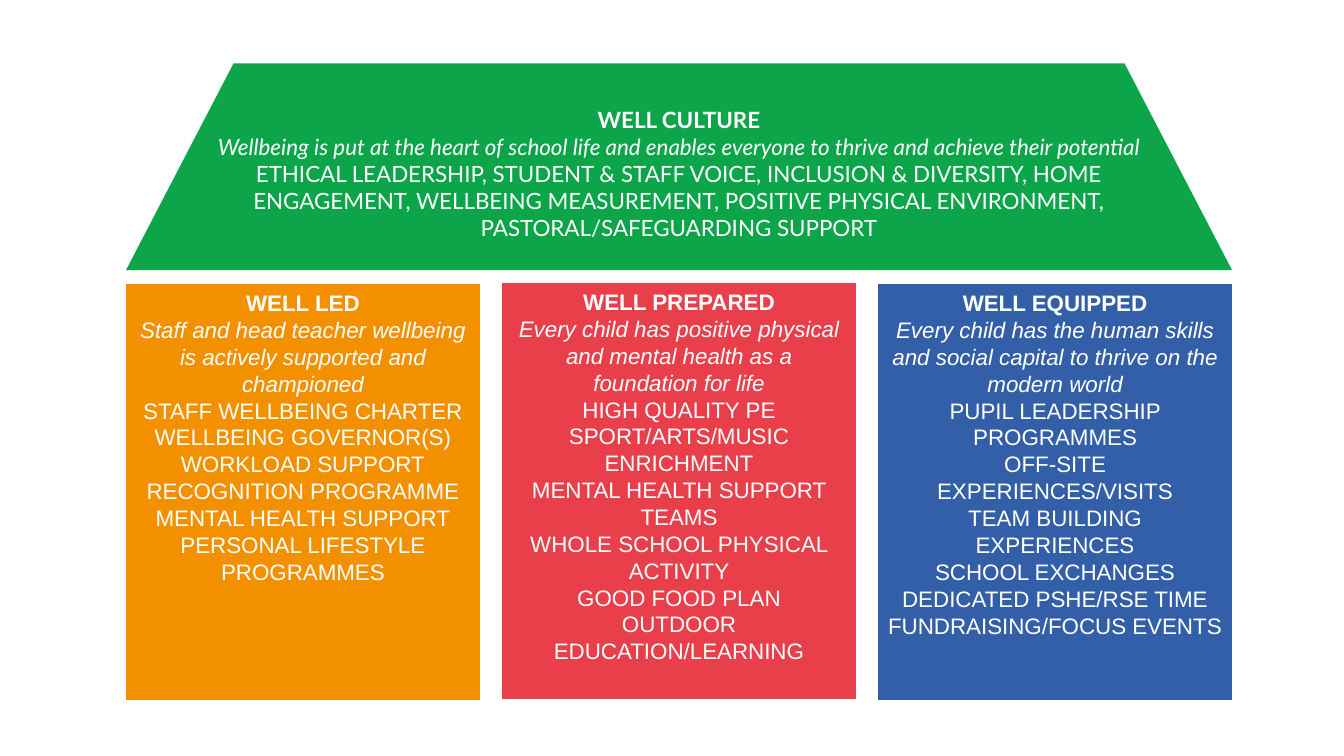
"""Build the wellbeing framework slide: a roof of culture over three pillars."""
from pptx import Presentation
from pptx.dml.color import RGBColor
from pptx.enum.shapes import MSO_SHAPE as Shape
from pptx.enum.text import MSO_ANCHOR as Anchor, PP_ALIGN as Align
from pptx.util import Inches, Pt

THEME = {
    "green": RGBColor.from_string("0DA549"),
    "orange": RGBColor.from_string("F39000"),
    "red": RGBColor.from_string("E83F4B"),
    "blue": RGBColor.from_string("335FA9"),
    "text": RGBColor.from_string("FFFFFF"),
    "size": Pt(16),
    "roof_font": "Lato",
    "pillar_font": "Arial",
}

ROOF = [
    "WELL CULTURE",
    "Wellbeing is put at the heart of school life and enables everyone to thrive and achieve their potential",
    "ETHICAL LEADERSHIP, STUDENT & STAFF VOICE, INCLUSION & DIVERSITY, HOME ENGAGEMENT, "
    "WELLBEING MEASUREMENT, POSITIVE PHYSICAL ENVIRONMENT, PASTORAL/SAFEGUARDING SUPPORT",
]

PILLARS = [
    ("orange", 2.82, [
        "WELL LED",
        "Staff and head teacher wellbeing is actively supported and championed",
        "STAFF WELLBEING CHARTER",
        "WELLBEING GOVERNOR(S)",
        "WORKLOAD SUPPORT",
        "RECOGNITION PROGRAMME",
        "MENTAL HEALTH SUPPORT",
        "PERSONAL LIFESTYLE PROGRAMMES",
    ]),
    ("red", 2.81, [
        "WELL PREPARED",
        "Every child has positive physical and mental health as a foundation for life",
        "HIGH QUALITY PE",
        "SPORT/ARTS/MUSIC ENRICHMENT",
        "MENTAL HEALTH SUPPORT TEAMS",
        "WHOLE SCHOOL PHYSICAL ACTIVITY",
        "GOOD FOOD PLAN",
        "OUTDOOR EDUCATION/LEARNING",
    ]),
    ("blue", 2.82, [
        "WELL EQUIPPED",
        "Every child has the human skills and social capital to thrive on the modern world",
        "PUPIL LEADERSHIP PROGRAMMES",
        "OFF-SITE EXPERIENCES/VISITS",
        "TEAM BUILDING EXPERIENCES",
        "SCHOOL EXCHANGES",
        "DEDICATED PSHE/RSE TIME",
        "FUNDRAISING/FOCUS EVENTS",
    ]),
]

LEFT, PITCH, PILLAR_WIDTH, BOTTOM = 1.25, 3.73, 3.51, 6.94
ROOF_TOP, ROOF_HEIGHT, ROOF_SLOPE = 0.63, 2.05, 0.52


def add_block(page, kind, place, color, font, anchor, lines):
    """Add a filled shape with a bold heading, an italic aim and plain topics."""
    box = page.shapes.add_shape(kind, *map(Inches, place))
    box.shadow.inherit = False
    box.fill.solid()
    box.fill.fore_color.rgb = THEME[color]
    box.line.fill.background()
    frame = box.text_frame
    layout = {
        "word_wrap": True,
        "vertical_anchor": anchor,
        "margin_left": Inches(0.09),
        "margin_right": Inches(0.09),
    }
    for name, value in layout.items():
        setattr(frame, name, value)
    for index, line in enumerate(lines):
        para = frame.paragraphs[0] if index == 0 else frame.add_paragraph()
        para.alignment = Align.CENTER
        span = para.add_run()
        span.text = line
        span.font.color.rgb = THEME["text"]
        style = {"name": font, "size": THEME["size"], "bold": index == 0, "italic": index == 1}
        for name, value in style.items():
            setattr(span.font, name, value)
    return box


def main():
    """Draw the roof and the pillars, then save the deck."""
    deck = Presentation()
    deck.slide_width, deck.slide_height = Inches(13.33), Inches(7.5)
    page = deck.slides.add_slide(deck.slide_layouts[6])
    roof_width = PITCH * (len(PILLARS) - 1) + PILLAR_WIDTH
    roof = add_block(page, Shape.TRAPEZOID, (LEFT, ROOF_TOP, roof_width, ROOF_HEIGHT),
                     "green", THEME["roof_font"], Anchor.MIDDLE, ROOF)
    roof.adjustments[0] = ROOF_SLOPE
    for column, (color, top, lines) in enumerate(PILLARS):
        place = (LEFT + column * PITCH, top, PILLAR_WIDTH, BOTTOM - top)
        add_block(page, Shape.FLOWCHART_PROCESS, place, color,
                  THEME["pillar_font"], Anchor.TOP, lines)
    deck.save("out.pptx")


if __name__ == "__main__":
    main()
